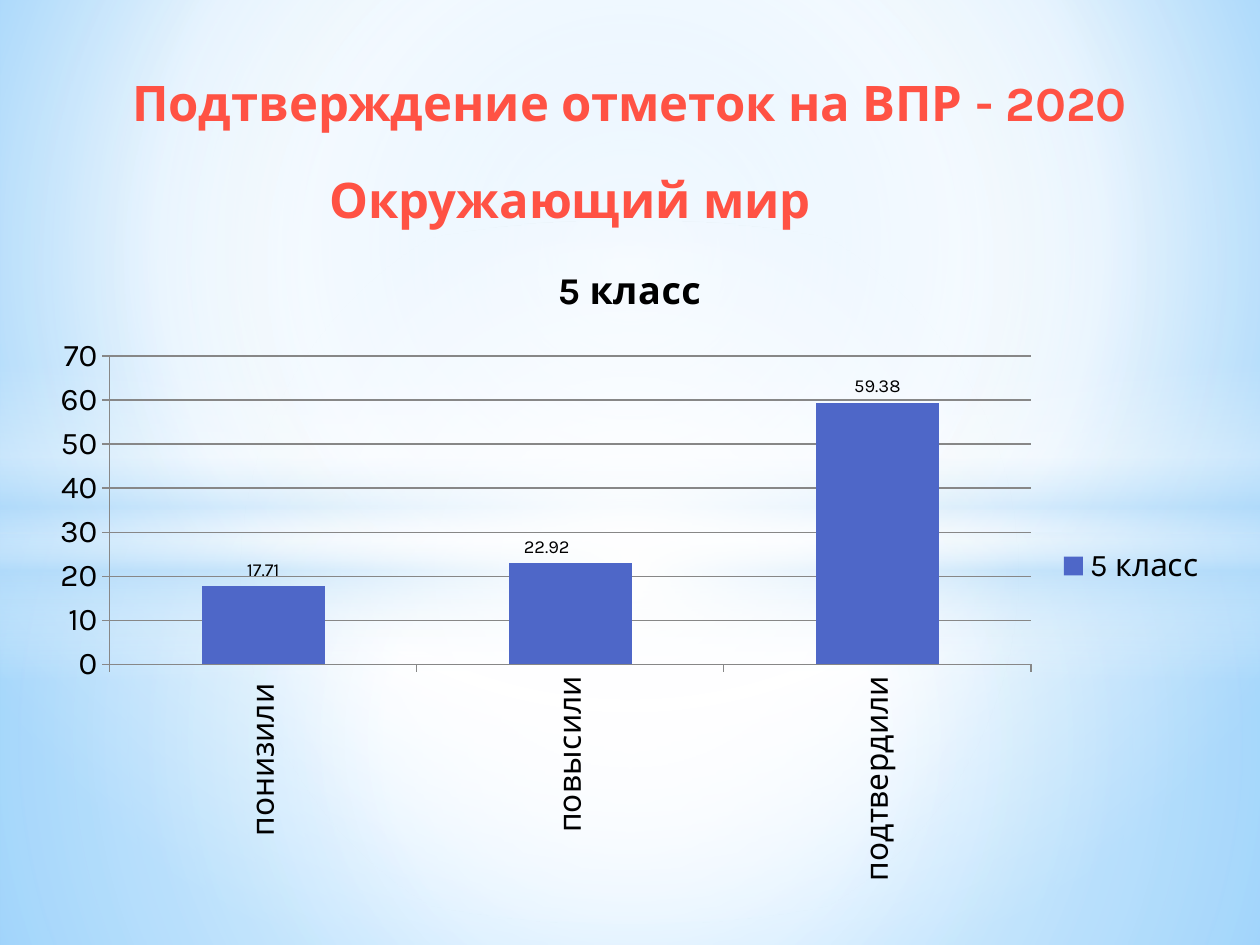
from lxml.etree import SubElement
from pptx import Presentation
from pptx.chart.data import CategoryChartData
from pptx.dml.color import RGBColor
from pptx.enum.chart import XL_CHART_TYPE as ChartType, XL_LABEL_POSITION as LabelPosition
from pptx.enum.chart import XL_LEGEND_POSITION as LegendPosition, XL_TICK_MARK as TickMark
from pptx.enum.shapes import MSO_SHAPE as Shape
from pptx.enum.text import MSO_AUTO_SIZE as AutoSize, PP_ALIGN as Align
from pptx.oxml import parse_xml
from pptx.oxml.ns import nsdecls, qn
from pptx.util import Inches, Pt

SCALE = Inches(1) / 126
WHITE = RGBColor(0xFF, 0xFF, 0xFF)
PALE = RGBColor(0xB4, 0xDC, 0xFA)
SKY = RGBColor(0x9E, 0xD5, 0xFF)
DEEP_SKY = RGBColor(0x5B, 0xB9, 0xFF)
CORAL = RGBColor(0xFF, 0x52, 0x44)
BLUE = RGBColor(0x4E, 0x67, 0xC8)
GRAY = RGBColor(0x87, 0x87, 0x87)
BLACK = RGBColor(0, 0, 0)
CENTER = (50, 50, 50, 50)


class SlideBuilder:
    """Holds the shared style and the current slide."""

    font = "Karla"

    def __init__(self, page):
        self.page = page

    def place(self, *lengths):
        return [round(length * SCALE) for length in lengths]

    def style(self, target, **values):
        values = {"name": self.font, **values}
        color = values.pop("color", BLACK)
        for key, value in values.items():
            setattr(target, key, value)
        target.color.rgb = color

    def gradient(self, holder, stops, focus=None):
        fill = parse_xml(f'<a:gradFill {nsdecls("a")} rotWithShape="1"><a:gsLst/></a:gradFill>')
        for position, color, opacity in stops:
            stop = SubElement(fill[0], qn("a:gs"), pos=str(position * 1000))
            tint = SubElement(stop, qn("a:srgbClr"), val=str(color))
            SubElement(tint, qn("a:alpha"), val=str(opacity * 1000))
        if focus:
            route = SubElement(fill, qn("a:path"), {"path": "circle"})
            edges = {side: str(inset * 1000) for side, inset in zip("ltrb", focus)}
            SubElement(route, qn("a:fillToRect"), edges)
        else:
            SubElement(fill, qn("a:lin"), ang="5400000", scaled="0")
        holder.replace(holder.find(qn("a:solidFill")), fill)

    def background(self, stops, focus):
        self.page.background.fill.solid()
        self.gradient(self.page.element.find(".//" + qn("p:bgPr")), stops, focus)

    def glow(self, kind, bounds, stops, focus=CENTER):
        shape = self.page.shapes.add_shape(kind, *self.place(*bounds))
        shape.shadow.inherit = False
        shape.line.fill.background()
        shape.fill.solid()
        self.gradient(shape.element.spPr, stops, focus)

    def heading(self, text, *bounds):
        box = self.page.shapes.add_textbox(*self.place(*bounds))
        box.text_frame.word_wrap = True
        box.text_frame.auto_size = AutoSize.SHAPE_TO_FIT_TEXT
        para = box.text_frame.paragraphs[0]
        para.alignment = Align.CENTER
        span = para.add_run()
        span.text = text
        self.style(span.font, size=Pt(28), bold=True, color=CORAL)

    def layout(self, holder, index, **values):
        node = parse_xml(f'<c:layout {nsdecls("c")}><c:manualLayout/></c:layout>')
        for key, value in values.items():
            SubElement(node[0], qn(f"c:{key}"), val=str(value))
        holder.insert(index, node)

    def column_chart(self, name, points, *bounds):
        data = CategoryChartData()
        data.categories = list(points)
        data.add_series(name, points.values())
        frame = self.page.shapes.add_chart(
            ChartType.COLUMN_CLUSTERED, *self.place(*bounds), data)
        chart = frame.chart
        self.style(chart.font, size=Pt(18))

        chart.has_title = True
        title = chart.chart_title.text_frame
        title.text = name
        self.style(title.paragraphs[0].runs[0].font, size=Pt(21.6), bold=True)

        chart.has_legend = True
        chart.legend.position = LegendPosition.RIGHT
        chart.legend.include_in_layout = False

        for axis in (chart.category_axis, chart.value_axis):
            axis.major_tick_mark = TickMark.OUTSIDE
            axis.format.line.color.rgb = GRAY
            self.style(axis.tick_labels.font, size=Pt(18))
        turned = chart.category_axis.format
        body = chart.category_axis._element.find(f'{qn("c:txPr")}/{qn("a:bodyPr")}')
        body.set("rot", "-5400000")
        body.set("vert", "horz")
        chart.value_axis.maximum_scale = 70
        chart.value_axis.major_unit = 10
        chart.value_axis.major_gridlines.format.line.color.rgb = GRAY

        plot = chart.plots[0]
        plot.gap_width = 150
        plot.vary_by_categories = False
        plot.has_data_labels = True
        plot.data_labels.show_value = True
        plot.data_labels.position = LabelPosition.OUTSIDE_END
        self.style(plot.data_labels.font, size=Pt(10.5))
        series = plot.series[0]
        series.format.fill.solid()
        series.format.fill.fore_color.rgb = BLUE

        label = series.points[1].data_label
        self.style(label.font, size=Pt(10.5))
        label.position = LabelPosition.OUTSIDE_END
        labels = series.data_labels
        labels.show_value = True
        labels.position = LabelPosition.OUTSIDE_END
        self.style(labels.font, size=Pt(10.5))
        self.layout(labels._element.find(qn("c:dLbl")), 1, x=-0.02, y=0)

        area = chart.element.find(".//" + qn("c:plotArea"))
        self.layout(area, 0, layoutTarget="inner", xMode="edge", yMode="edge",
                    x=0.06, y=0.18, w=0.78, h=0.47)


def main():
    deck = Presentation()
    deck.slide_width, deck.slide_height = Inches(10), Inches(7.5)
    slide = SlideBuilder(deck.slides.add_slide(deck.slide_layouts[6]))

    slide.background([(0, SKY, 100), (60, WHITE, 100), (100, DEEP_SKY, 100)],
                     (20, 10, 20, 60))
    slide.glow(Shape.RECTANGLE, (0, 533, 1260, 412),
               [(0, WHITE, 91), (37, WHITE, 76), (100, PALE, 79)])
    slide.glow(Shape.RECTANGLE, (0, 0, 1260, 533),
               [(0, WHITE, 89), (48, WHITE, 62), (100, PALE, 79)])
    slide.glow(Shape.RECTANGLE, (0, 365, 1260, 315),
               [(0, WHITE, 0), (29, WHITE, 30), (45, PALE, 40),
                (55, WHITE, 26), (65, PALE, 60), (100, WHITE, 0)], None)
    slide.glow(Shape.OVAL, (0, 221, 1260, 703), [(0, WHITE, 100), (54, WHITE, 0)])

    slide.heading("Подтверждение отметок на ВПР - 2020", 84, 66, 1091, 72)
    slide.column_chart("5 класс", {"понизили ": 17.71, "повысили": 22.92, "подтвердили": 59.38},
                       39, 238, 1181, 656)
    slide.heading("Окружающий мир", 223, 163, 694, 72)
    deck.save("out.pptx")


if __name__ == "__main__":
    main()
